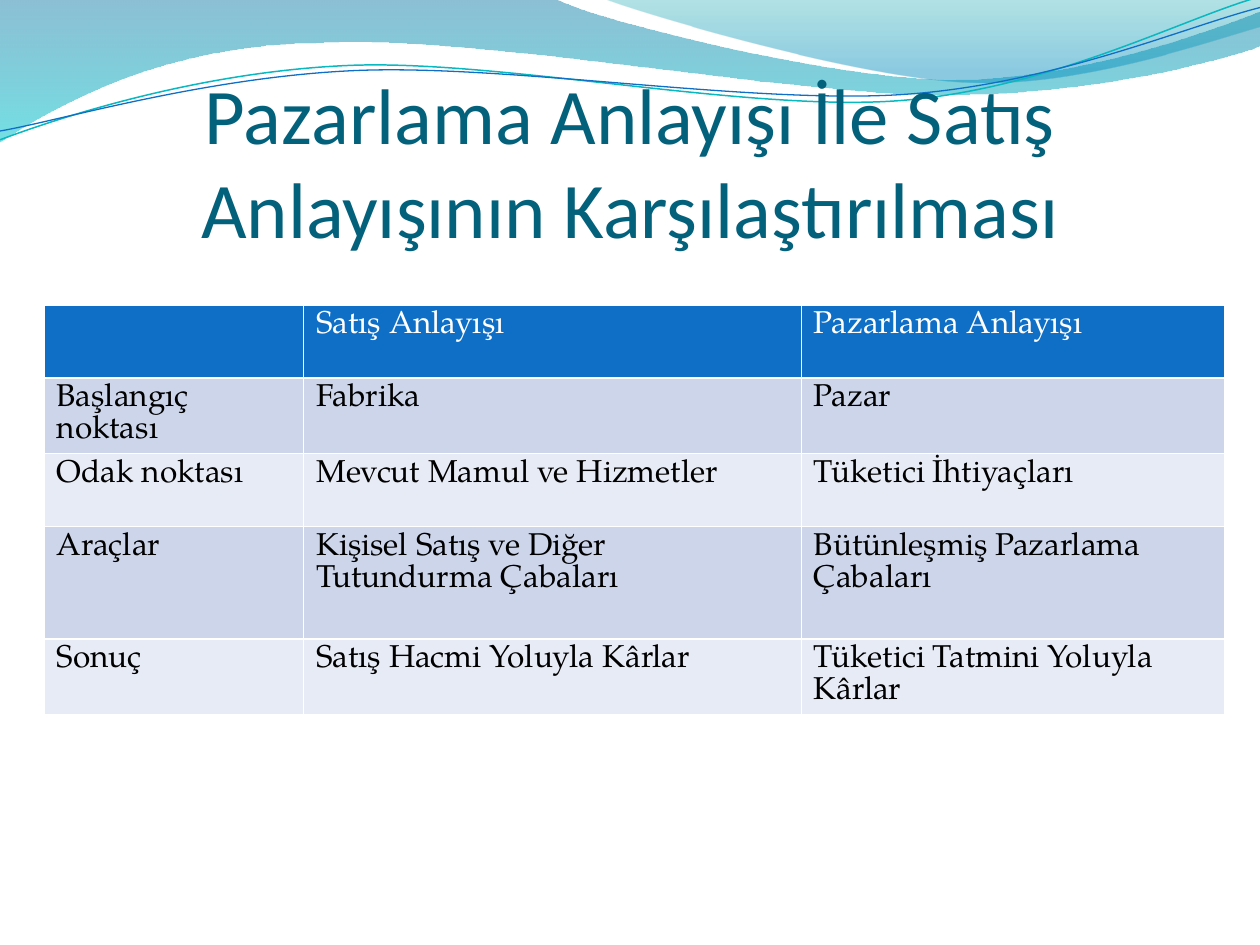
from pptx import Presentation, util as u
from pptx.dml.color import RGBColor
from pptx.enum import text
from pptx.oxml import ns
from lxml import etree

# Content
TITLE = "Pazarlama Anlayışı İle Satış Anlayışının Karşılaştırılması"
COMPARISON = [
    ("", "Satış Anlayışı", "Pazarlama Anlayışı"),
    ("Başlangıç noktası", "Fabrika", "Pazar"),
    ("Odak noktası", "Mevcut Mamul ve Hizmetler", "Tüketici İhtiyaçları"),
    ("Araçlar", "Kişisel Satış ve Diğer Tutundurma Çabaları",
     "Bütünleşmiş Pazarlama Çabaları"),
    ("Sonuç", "Satış Hacmi Yoluyla Kârlar", "Tüketici Tatmini Yoluyla Kârlar"),
]
COLUMN_WIDTHS = (2.06, 3.95, 3.36)
ROW_HEIGHTS = (0.58, 0.58, 0.58, 0.89, 0.58)

THEME = {
    "title_font": "Calibri", "title_size": 45, "title_color": "04617B",
    "body_font": "TeX Gyre Pagella", "body_size": 18, "body_color": "000000",
    "header_color": "FFFFFF", "header_fill": "0F6FC6",
    "bands": ("CCD5EA", "E7EBF5"), "border": "FFFFFF",
}

# Wave outlines: a 2-tuple is a corner, a 6-tuple is a Bézier curve
WAVE_BANDS = [
    ([(0, -0.01), (4.4, -0.01), (4.76, 0.17, 6.64, 0.63, 7.58, 0.63),
      (8.53, 0.63, 9.58, 0.26, 10, 0.09), (10.01, 0.36),
      (9.83, 0.44, 8.7, 0.76, 7.46, 0.75), (6.22, 0.75, 3.82, 0.28, 2.57, 0.34),
      (1.29, 0.35, 0.46, 0.83, -0.01, 1.13), (0, -0.01)],
     [(0, "0074A1", 45), (1, "00C6CF", 55)]),
    ([(4.79, -0.01), (5.09, 0.11, 6.82, 0.62, 7.69, 0.65),
      (8.56, 0.69, 9.61, 0.32, 10, 0.21), (10, 0), (4.79, -0.01)],
     [(0, "00A1A9", 30), (0.8, "008BBF", 45)]),
]
WAVE_LINES = [
    ([(0, 1.11), (0.48, 0.93, 1.58, 0.57, 2.77, 0.52),
      (3.95, 0.47, 5.93, 0.89, 7.13, 0.8), (8.33, 0.71, 9.38, 0.15, 9.98, -0.02)],
     "0AB8BF", 0.85),
    ([(0, 1.04), (0.47, 0.96, 1.64, 0.61, 2.83, 0.56),
      (4.03, 0.51, 5.97, 0.83, 7.17, 0.75), (8.36, 0.67, 9.41, 0.21, 10, 0.06)],
     "0F6FC6", 0.75),
]


def rgb(code):
    return RGBColor.from_string(code)


def add_wave(slide, outline, close):
    """Lay out every point, then join each group of three into one curve."""
    points = [(u.Inches(step[i]), u.Inches(step[i + 1]))
              for step in outline for i in range(0, len(step), 2)]
    builder = slide.shapes.build_freeform(*points[0])
    builder.add_line_segments(points[1:], close=close)
    wave = builder.convert_to_shape()
    wave.shadow.inherit = False

    segments = iter(list(wave.element.spPr.iter(ns.qn("a:lnTo"))))
    for step in outline[1:]:
        segment = next(segments)
        if len(step) == 6:
            segment.addprevious(etree.Element(ns.qn("a:cubicBezTo")))
            curve = segment.getprevious()
            for part in (segment, next(segments), next(segments)):
                curve.append(part[0])
                part.getparent().remove(part)
    return wave


def fill_gradient(wave, stops):
    wave.fill.gradient()
    wave.fill.gradient_angle = 270
    for gradient_stop, (position, color, opacity) in zip(wave.fill.gradient_stops, stops):
        gradient_stop.position = position
        gradient_stop.color.rgb = rgb(color)
    for color_node, stop in zip(wave.element.spPr.iter(ns.qn("a:srgbClr")), stops):
        etree.SubElement(color_node, ns.qn("a:alpha"), val=str(stop[2] * 1000))


def style_run(run, font, size, color):
    run.font.name = font
    run.font.size = u.Pt(size)
    run.font.color.rgb = rgb(color)


def add_borders(cell):
    properties = cell._tc.get_or_add_tcPr()
    for side in "LRTB":
        line = etree.SubElement(properties, ns.qn(f"a:ln{side}"), w=str(u.Pt(1)))
        solid = etree.SubElement(line, ns.qn("a:solidFill"))
        etree.SubElement(solid, ns.qn("a:srgbClr"), val=THEME["border"])


def add_title(slide):
    title = slide.shapes.add_textbox(u.Inches(0.5), u.Inches(0.77),
                                     u.Inches(9), u.Inches(1.25))
    frame = title.text_frame
    frame.word_wrap = True
    frame.vertical_anchor = text.MSO_ANCHOR.BOTTOM
    frame.margin_left = frame.margin_right = frame.margin_bottom = 0
    frame.text = TITLE
    heading = frame.paragraphs[0]
    heading.alignment = text.PP_ALIGN.CENTER
    style_run(heading.runs[0], THEME["title_font"], THEME["title_size"],
              THEME["title_color"])


def add_comparison(slide):
    table = slide.shapes.add_table(
        len(COMPARISON), len(COLUMN_WIDTHS), u.Inches(0.35), u.Inches(2.42),
        u.Inches(sum(COLUMN_WIDTHS)), u.Inches(sum(ROW_HEIGHTS))).table
    for column, width in zip(table.columns, COLUMN_WIDTHS):
        column.width = u.Inches(width)
    for r, (labels, height) in enumerate(zip(COMPARISON, ROW_HEIGHTS)):
        table.rows[r].height = u.Inches(height)
        header = r == 0
        fill = THEME["header_fill"] if header else THEME["bands"][(r - 1) % 2]
        color = THEME["header_color"] if header else THEME["body_color"]
        for c, label in enumerate(labels):
            cell = table.cell(r, c)
            add_borders(cell)
            cell.fill.solid()
            cell.fill.fore_color.rgb = rgb(fill)
            if label:
                cell.text_frame.text = label
                paragraph = cell.text_frame.paragraphs[0]
                paragraph.line_spacing = u.Pt(THEME["body_size"])
                style_run(paragraph.runs[0], THEME["body_font"],
                          THEME["body_size"], color)


def main():
    deck = Presentation()
    deck.slide_width, deck.slide_height = u.Inches(10), u.Inches(7.5)
    slide = deck.slides.add_slide(deck.slide_layouts[6])

    # Waves along the top edge
    for outline, stops in WAVE_BANDS:
        band = add_wave(slide, outline, close=True)
        fill_gradient(band, stops)
        band.line.fill.background()
    for outline, color, width in WAVE_LINES:
        strand = add_wave(slide, outline, close=False)
        strand.fill.background()
        strand.line.color.rgb = rgb(color)
        strand.line.width = u.Pt(width)

    # Title and comparison table
    add_title(slide)
    add_comparison(slide)
    deck.save("out.pptx")


if __name__ == "__main__":
    main()
